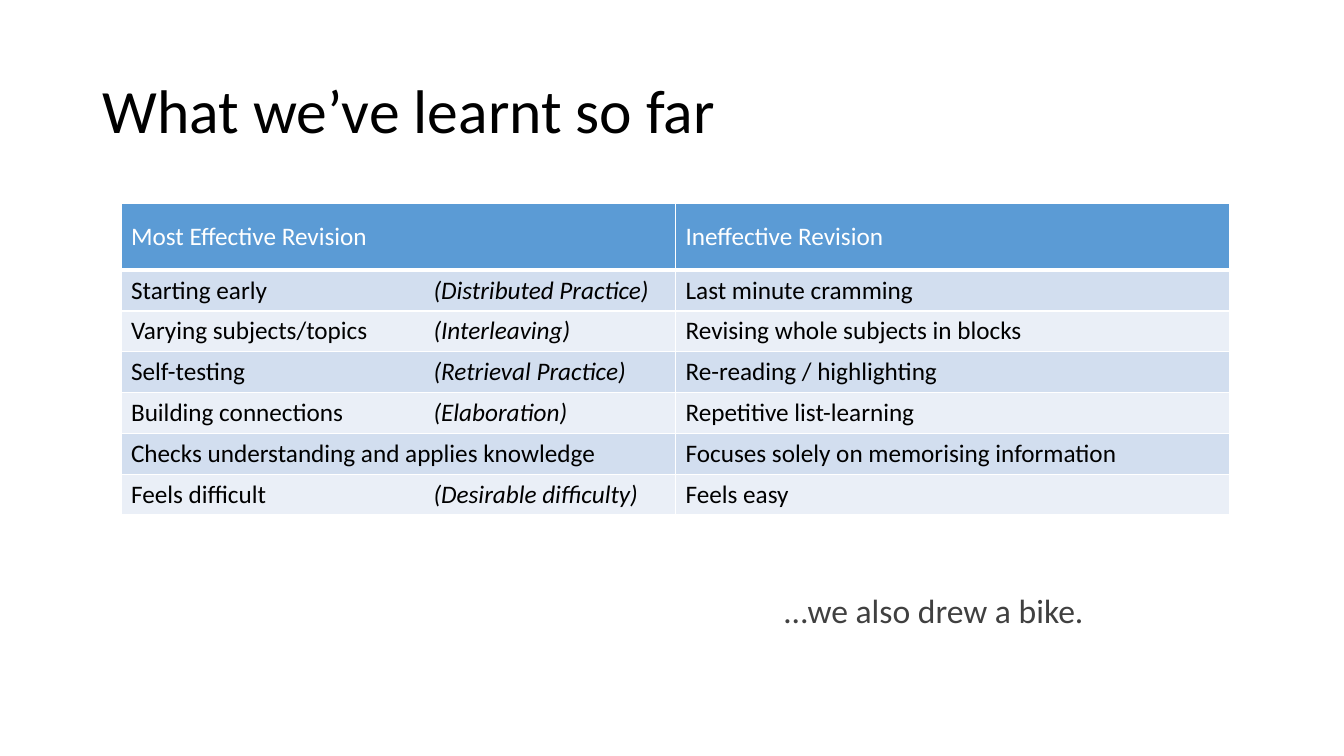
from lxml.etree import SubElement
from pptx import Presentation
from pptx.dml.color import RGBColor
from pptx.enum.text import MSO_ANCHOR as Anchor
from pptx.oxml.ns import qn
from pptx.util import Inches, Pt

BLACK = RGBColor(0x00, 0x00, 0x00)
WHITE = RGBColor(0xFF, 0xFF, 0xFF)
GREY = RGBColor(0x40, 0x40, 0x40)
HEADER_BLUE = RGBColor(0x5B, 0x9B, 0xD5)
BANDS = (RGBColor(0xD2, 0xDE, 0xEF), RGBColor(0xEA, 0xEF, 0xF7))

GRID = Inches(0.1)  # width of a grid column and height of a grid row

HEADINGS = ("Most Effective Revision", "Ineffective Revision")
# Effective habit, its technical term, ineffective habit
HABITS = [
    ("Starting early", "(Distributed Practice)", "Last minute cramming"),
    ("Varying subjects/topics", "(Interleaving)", "Revising whole subjects in blocks"),
    ("Self-testing", "(Retrieval Practice)", "Re-reading / highlighting"),
    ("Building connections", "(Elaboration)", "Repetitive list-learning"),
    ("Checks understanding and applies knowledge", "", "Focuses solely on memorising information"),
    ("Feels difficult", "(Desirable difficulty)", "Feels easy"),
]


def grid(*counts):
    return [round(count * GRID) for count in counts]


class RevisionSlide:
    font_name = "Calibri"
    table_size = 18
    term_stop = 30  # grid columns from the cell's text edge

    def __init__(self, deck):
        self.page = deck.slides.add_slide(deck.slide_layouts[6])

    def style(self, para, size, color):
        font = para.font
        font.name, font.size, font.bold = self.font_name, Pt(size), False
        font.color.rgb = color

    def text(self, words, place, size, color, anchor=Anchor.TOP):
        frame = self.page.shapes.add_textbox(*grid(*place)).text_frame
        frame.word_wrap = True
        frame.vertical_anchor = anchor
        para = frame.paragraphs[0]
        para.text = words
        para.line_spacing = 0.9
        self.style(para, size, color)
        return frame

    def indented_text(self, words, place, size, color, indent):
        frame = self.text(words, place, size, color)
        frame.margin_left = frame.margin_right = 0
        para = frame.paragraphs[0]
        para.space_before, para.space_after = Pt(2), Pt(4)
        props = para._p.get_or_add_pPr()
        props.set("marL", str(grid(indent)[0]))
        props.set("indent", "0")

    def borders(self, cell, bottom):
        props = cell._tc.get_or_add_tcPr()
        for side, width in (("L", 1), ("R", 1), ("T", 1), ("B", bottom)):
            line = SubElement(props, qn(f"a:ln{side}"), w=str(Pt(width)))
            fill = SubElement(line, qn("a:solidFill"))
            SubElement(fill, qn("a:srgbClr"), val=str(WHITE))

    def cell(self, cell, words, fill, color=BLACK, term="", bottom=1):
        self.borders(cell, bottom)
        cell.fill.solid()
        cell.fill.fore_color.rgb = fill
        para = cell.text_frame.paragraphs[0]
        para.add_run().text = words
        if term:
            # The term starts at a tab stop shared by all rows
            stops = SubElement(para._p.get_or_add_pPr(), qn("a:tabLst"))
            SubElement(stops, qn("a:tab"), pos=str(grid(self.term_stop)[0]), algn="l")
            span = para.add_run()
            span.text = "\t" + term
            span.font.italic = True
        self.style(para, self.table_size, color)

    def table(self, place, header_height, row_height):
        table = self.page.shapes.add_table(len(HABITS) + 1, len(HEADINGS), *grid(*place)).table
        for row in table.rows:
            row.height = grid(row_height)[0]
        table.rows[0].height = grid(header_height)[0]

        # Header row
        for column, heading in enumerate(HEADINGS):
            head = table.cell(0, column)
            self.cell(head, heading, HEADER_BLUE, WHITE, bottom=3)
            head.vertical_anchor = Anchor.MIDDLE

        # Banded rows
        for index, (good, term, bad) in enumerate(HABITS):
            band = BANDS[index % 2]
            self.cell(table.cell(index + 1, 0), good, band, term=term)
            self.cell(table.cell(index + 1, 1), bad, band)


def main():
    deck = Presentation()
    deck.slide_width, deck.slide_height = Inches(13.33), Inches(7.5)
    slide = RevisionSlide(deck)

    # Title
    slide.text("What we’ve learnt so far", (9.2, 4, 115, 14.5), 44, BLACK, Anchor.MIDDLE)
    # Comparison of revision habits
    slide.table((12, 20.2, 110, 30.9), header_height=6.6, row_height=4.05)
    # Closing remark
    slide.indented_text("…we also drew a bike.", (75.6, 58.5, 46.4, 6.9), 24, GREY, indent=2.2)

    deck.save("out.pptx")


if __name__ == "__main__":
    main()
